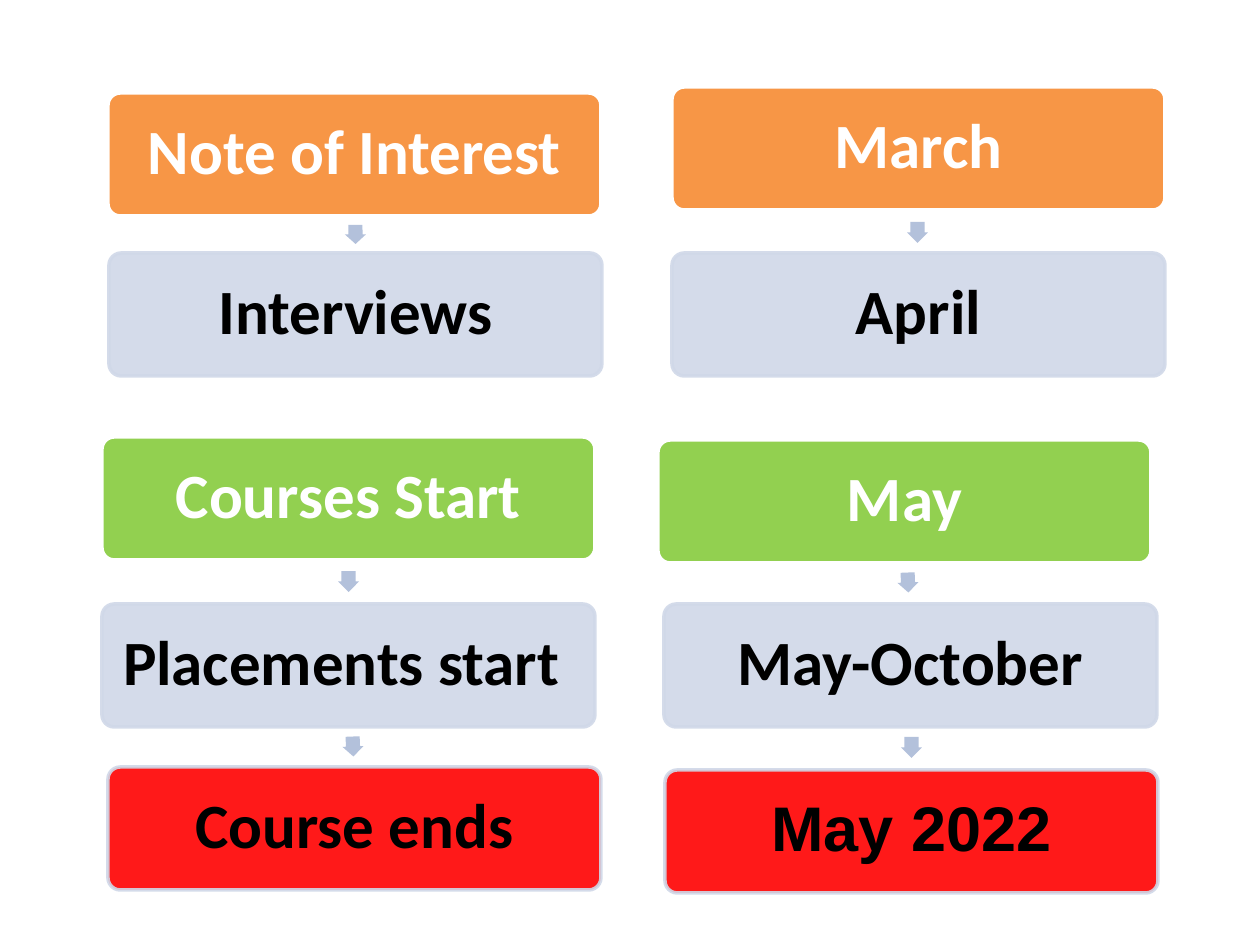
from dataclasses import dataclass

from lxml.etree import SubElement
from pptx import Presentation
from pptx.dml.color import RGBColor
from pptx.enum.shapes import MSO_SHAPE
from pptx.enum.text import MSO_ANCHOR, PP_ALIGN
from pptx.oxml.ns import qn
from pptx.util import Pt

EMU_PER_PX = 914400 / 126
BOX_W, BOX_H, BOX_INSET = 493, 123, 10
ARROW_H = 21

COLORS = {
    "orange": "F79646",
    "green": "92D050",
    "pale": "D0D8E8",
    "red": "FF0000",
    "arrow": "B3C1DB",
    "white": "FFFFFF",
    "black": "000000",
}


@dataclass(frozen=True)
class Style:
    fill: str
    line: str
    text: str
    opacity: int = 100


@dataclass(frozen=True)
class Step:
    text: str
    left: int
    top: int
    style: Style
    font: str = "Calibri"


@dataclass(frozen=True)
class Arrow:
    left: int
    top: int
    length: int
    rotation: float = 90


INTAKE = Style("orange", "white", "white")
START = Style("green", "white", "white")
MIDDLE = Style("pale", "pale", "black", 90)
END = Style("red", "pale", "black", 90)

STEPS = [
    Step("Note of Interest", 108, 93, INTAKE),
    Step("Interviews", 109, 253, MIDDLE),
    Step("March", 672, 87, INTAKE),
    Step("April", 672, 253, MIDDLE),
    Step("Courses Start", 102, 437, START),
    Step("Placements start ", 102, 604, MIDDLE),
    Step("Course ends", 108, 767, END),
    Step("May", 658, 440, START),
    Step("May-October", 664, 604, MIDDLE),
    Step("May 2022", 665, 770, END, "Arial"),
]

ARROWS = [
    Arrow(346, 224, 19, 89.8),
    Arrow(907, 222, 21),
    Arrow(338, 571, 21),
    Arrow(343, 736, 20, 87.8),
    Arrow(898, 572, 20, 87.8),
    Arrow(901, 737, 21, 89.8),
]


def px(n: int) -> int:
    return round(n * EMU_PER_PX)


def paint(fill, color: str) -> None:
    fill.solid()
    fill.fore_color.rgb = RGBColor.from_string(COLORS[color])


def set_opacity(s, percent: int) -> None:
    for clr in s._element.spPr.iter(qn("a:srgbClr")):
        SubElement(clr, qn("a:alpha"), val=str(percent * 1000))


def add_step(shapes, step: Step) -> None:
    style = step.style
    s = shapes.add_shape(MSO_SHAPE.ROUNDED_RECTANGLE, px(step.left), px(step.top),
                         px(BOX_W), px(BOX_H))
    s.adjustments[0] = 0.1
    s.shadow.inherit = False
    paint(s.fill, style.fill)
    paint(s.line.fill, style.line)
    s.line.width = Pt(2)
    if style.opacity < 100:
        set_opacity(s, style.opacity)

    tf = s.text_frame
    tf.word_wrap = True
    tf.vertical_anchor = MSO_ANCHOR.MIDDLE
    tf.margin_left = tf.margin_right = tf.margin_top = tf.margin_bottom = px(BOX_INSET)
    tf.text = step.text
    p = tf.paragraphs[0]
    p.alignment = PP_ALIGN.CENTER
    p.line_spacing = 0.9
    r = p.runs[0]
    r.font.name = step.font
    r.font.size = Pt(36)
    r.font.bold = True
    r.font.color.rgb = RGBColor.from_string(COLORS[style.text])


def add_arrow(shapes, arrow: Arrow) -> None:
    s = shapes.add_shape(MSO_SHAPE.RIGHT_ARROW, px(arrow.left), px(arrow.top),
                         px(arrow.length), px(ARROW_H))
    s.adjustments[0] = 0.67
    s.adjustments[1] = 0.5
    s.rotation = arrow.rotation
    s.shadow.inherit = False
    paint(s.fill, "arrow")
    s.line.fill.background()


def main() -> None:
    prs = Presentation()
    prs.slide_width, prs.slide_height = px(1260), px(945)
    shapes = prs.slides.add_slide(prs.slide_layouts[6]).shapes
    for step in STEPS:
        add_step(shapes, step)
    for arrow in ARROWS:
        add_arrow(shapes, arrow)
    prs.save("out.pptx")


if __name__ == "__main__":
    main()
